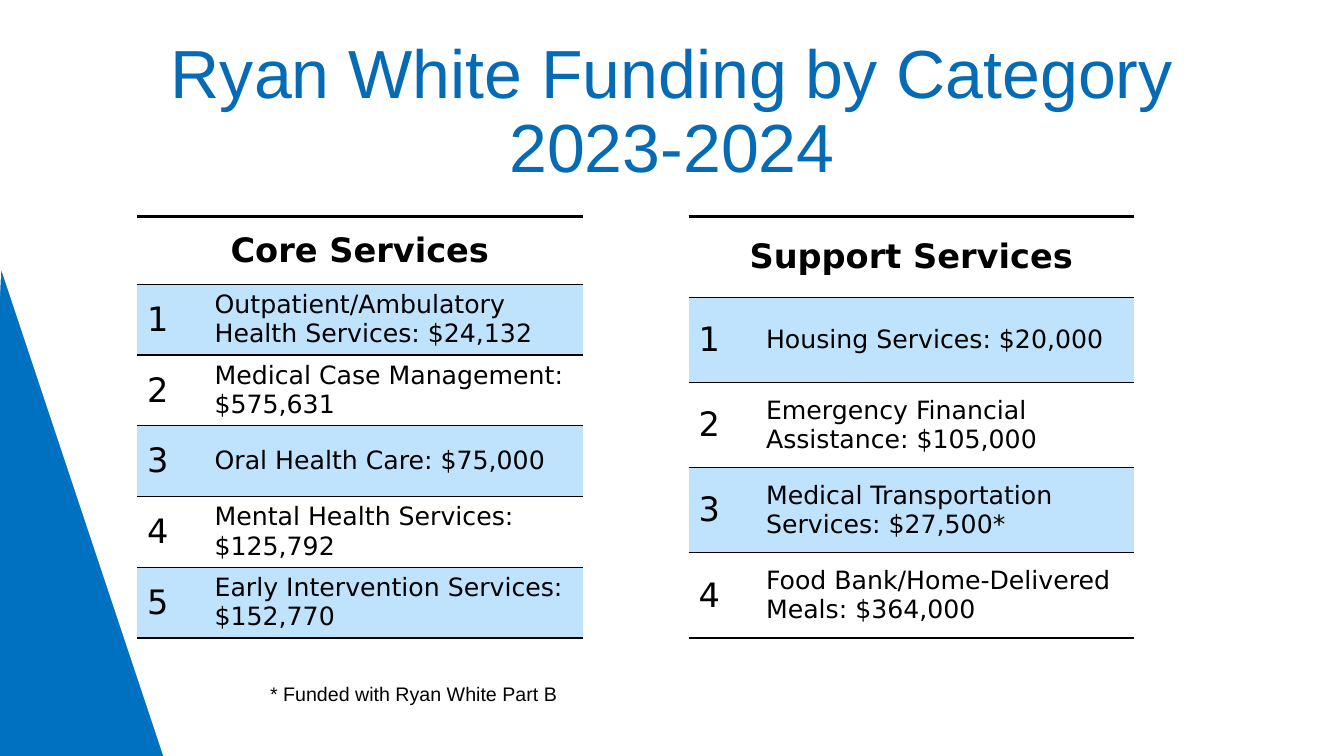
"""Build the funding slide with its core and support service tables."""
from dataclasses import dataclass
from typing import Any

from lxml import etree
from pptx import Presentation
from pptx.dml.color import RGBColor
from pptx.enum import text
from pptx.oxml import ns
from pptx.util import Pt


@dataclass(frozen=True)
class Theme:
    """Colours, fonts and type sizes."""
    black: str = "000000"
    white: str = "FFFFFF"
    title: str = "056BB5"
    wedge: str = "0070C0"
    band: str = "C0E3FD"
    sans: str = "Arial"
    body: str = "DejaVu Sans"
    huge: float = 48.6
    large: float = 24
    mid: float = 18
    small: float = 14


@dataclass(frozen=True)
class Group:
    """One table of services."""
    head: str
    left: float
    top_row: float
    items: tuple[str, ...]


THEME = Theme()
TOP, HEIGHT = 154.8, 301
COLS = (48.2, 270)
WEDGE = ((-5.8, 550.8), (-5.8, 229), (-2.9, 165.6), (125.3, 550.1))
GROUPS = (
    Group("Core Services", 97.9, 48.2, (
        "Outpatient/Ambulatory Health Services: $24,132",
        "Medical Case Management: $575,631",
        "Oral Health Care: $75,000",
        "Mental Health Services: $125,792",
        "Early Intervention Services: $152,770")),
    Group("Support Services", 491.8, 57.6, (
        "Housing Services: $20,000",
        "Emergency Financial Assistance: $105,000",
        "Medical Transportation Services: $27,500*",
        "Food Bank/Home-Delivered Meals: $364,000")),
)


def style(par: Any, font: str, size: float, color: str, bold: bool = False) -> None:
    """Format every run of a paragraph."""
    for run in par.runs:
        run.font.name, run.font.size, run.font.bold = font, Pt(size), bold
        run.font.color.rgb = RGBColor.from_string(color)


def add_text(slide: Any, words: str, box: tuple[float, ...], size: float, color: str) -> Any:
    """Add a wrapped text box and return its frame."""
    frame = slide.shapes.add_textbox(*map(Pt, box)).text_frame
    frame.word_wrap = True
    frame.paragraphs[0].text = words
    style(frame.paragraphs[0], THEME.sans, size, color)
    return frame


def add_wedge(slide: Any) -> None:
    """Draw the blue wedge in the lower left corner."""
    points = [(Pt(x), Pt(y)) for x, y in WEDGE]
    form = slide.shapes.build_freeform(*points[0])
    form.add_line_segments(points[1:], close=True)
    wedge = form.convert_to_shape()
    wedge.shadow.inherit = False
    wedge.fill.solid()
    wedge.fill.fore_color.rgb = RGBColor.from_string(THEME.wedge)
    wedge.line.color.rgb = RGBColor.from_string(THEME.white)
    wedge.line.width = Pt(10)


def rule(cell: Any, top: float) -> None:
    """Rule a cell above and below, leaving its sides open."""
    props = cell._tc.get_or_add_tcPr()
    for side, width in (("L", 0), ("R", 0), ("T", top), ("B", 1)):
        line = etree.SubElement(props, ns.qn(f"a:ln{side}"), w=str(Pt(width)))
        if width:
            fill = etree.SubElement(line, ns.qn("a:solidFill"))
            etree.SubElement(fill, ns.qn("a:srgbClr"), val=THEME.black)
        else:
            etree.SubElement(line, ns.qn("a:noFill"))


def fill_cell(cell: Any, words: str, size: float, band: bool, head: bool = False) -> None:
    """Write, rule and shade one table cell."""
    rule(cell, 2.25 if head else 1)
    if band:
        cell.fill.solid()
        cell.fill.fore_color.rgb = RGBColor.from_string(THEME.band)
    else:
        cell.fill.background()
    cell.vertical_anchor = text.MSO_ANCHOR.MIDDLE
    par = cell.text_frame.paragraphs[0]
    par.text = words
    par.alignment = text.PP_ALIGN.CENTER if head else text.PP_ALIGN.LEFT
    style(par, THEME.body, size, THEME.black, head)


def add_group(slide: Any, group: Group) -> None:
    """Add the table of one service group."""
    count = len(group.items)
    table = slide.shapes.add_table(
        count + 1, 2, Pt(group.left), Pt(TOP), Pt(sum(COLS)), Pt(HEIGHT)).table
    table.first_row = table.horz_banding = False
    for col, width in zip(table.columns, COLS):
        col.width = Pt(width)
    for row in table.rows:
        row.height = Pt((HEIGHT - group.top_row) / count)
    table.rows[0].height = Pt(group.top_row)
    table.cell(0, 0).merge(table.cell(0, 1))
    for col, words in enumerate((group.head, "")):
        fill_cell(table.cell(0, col), words, THEME.large, False, True)
    for row, item in enumerate(group.items, 1):
        band = row % 2 == 1
        fill_cell(table.cell(row, 0), str(row), THEME.large, band)
        fill_cell(table.cell(row, 1), item, THEME.mid, band)


def main() -> None:
    """Build and save the slide."""
    deck = Presentation()
    deck.slide_width, deck.slide_height = Pt(960), Pt(540)
    slide = deck.slides.add_slide(deck.slide_layouts[6])
    title = add_text(slide, "Ryan White Funding by Category\v2023-2024",
                     (66, 28.8, 828, 104.4), THEME.huge, THEME.title)
    title.vertical_anchor = text.MSO_ANCHOR.MIDDLE
    title.paragraphs[0].alignment = text.PP_ALIGN.CENTER
    title.paragraphs[0].line_spacing = 0.9
    add_wedge(slide)
    for group in GROUPS:
        add_group(slide, group)
    note = add_text(slide, "* Funded with Ryan White Part B",
                    (185.8, 483.8, 473.8, 24.5), THEME.small, THEME.black)
    note.auto_size = text.MSO_AUTO_SIZE.SHAPE_TO_FIT_TEXT
    deck.save("out.pptx")


if __name__ == "__main__":
    main()
